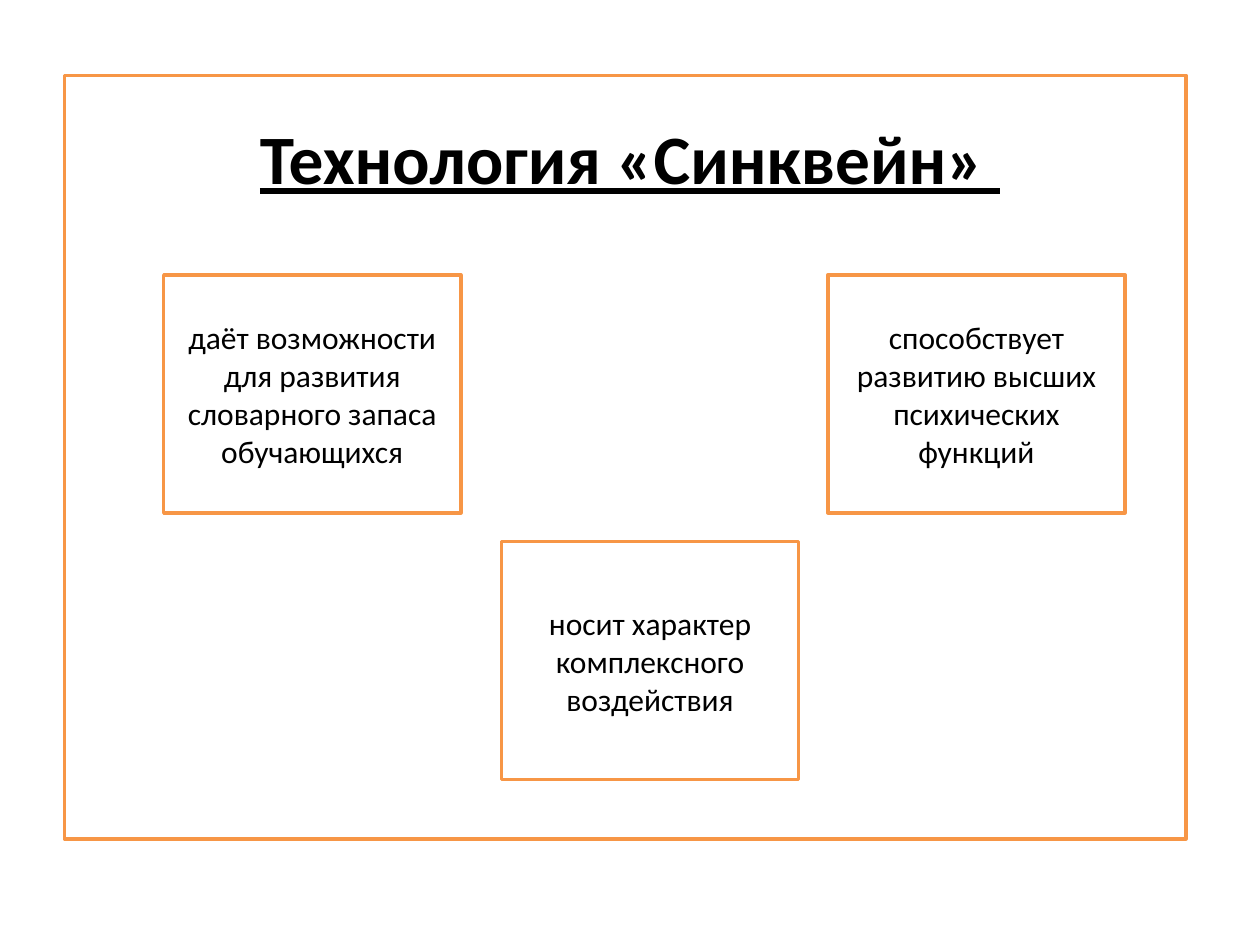
from dataclasses import dataclass

from pptx import Presentation
from pptx.dml.color import RGBColor
from pptx.enum.shapes import MSO_SHAPE
from pptx.enum.text import MSO_ANCHOR, PP_ALIGN
from pptx.shapes.autoshape import Shape
from pptx.slide import Slide
from pptx.text.text import TextFrame
from pptx.util import Cm, Pt

COLORS = {"paper": "FFFFFF", "border": "F79646", "ink": "000000"}
FONT = "Calibri"
CARD_WIDTH, CARD_HEIGHT = 5.99, 4.8
UPPER_ROW, LOWER_ROW = 5.54, 10.92


@dataclass(frozen=True)
class Card:
    left: float
    top: float
    text: str


CARDS = (
    Card(3.3, UPPER_ROW, "даёт возможности для развития словарного запаса обучающихся"),
    Card(10.11, LOWER_ROW, "носит характер комплексного воздействия"),
    Card(16.69, UPPER_ROW, "способствует развитию высших психических функций"),
)


def color(key: str) -> RGBColor:
    return RGBColor.from_string(COLORS[key])


def add_panel(slide: Slide, left: float, top: float, width: float, height: float) -> Shape:
    panel = slide.shapes.add_shape(
        MSO_SHAPE.RECTANGLE, Cm(left), Cm(top), Cm(width), Cm(height)
    )
    panel.shadow.inherit = False
    panel.fill.solid()
    panel.fill.fore_color.rgb = color("paper")
    panel.line.color.rgb = color("border")
    panel.line.width = Pt(2)
    return panel


def write_centred(frame: TextFrame, text: str, size: float, heading: bool = False) -> None:
    frame.word_wrap = True
    frame.vertical_anchor = MSO_ANCHOR.MIDDLE
    paragraph = frame.paragraphs[0]
    paragraph.text = text
    paragraph.alignment = PP_ALIGN.CENTER
    font = paragraph.font
    font.name = FONT
    font.size = Pt(size)
    font.bold = heading
    font.underline = heading
    font.color.rgb = color("ink")


def add_card(slide: Slide, card: Card) -> None:
    panel = add_panel(slide, card.left, card.top, CARD_WIDTH, CARD_HEIGHT)
    write_centred(panel.text_frame, card.text, 18)


def main() -> None:
    """Build the slide on the benefits of the cinquain technique."""
    deck = Presentation()
    deck.slide_width, deck.slide_height = Cm(25.4), Cm(19.05)
    slide = deck.slides.add_slide(deck.slide_layouts[6])
    add_panel(slide, 1.3, 1.52, 22.61, 15.39)
    title = slide.shapes.add_textbox(Cm(1.27), Cm(2.34), Cm(22.86), Cm(1.63))
    write_centred(title.text_frame, "Технология «Синквейн» ", 39.6, heading=True)
    for card in CARDS:
        add_card(slide, card)
    deck.save("out.pptx")


if __name__ == "__main__":
    main()
